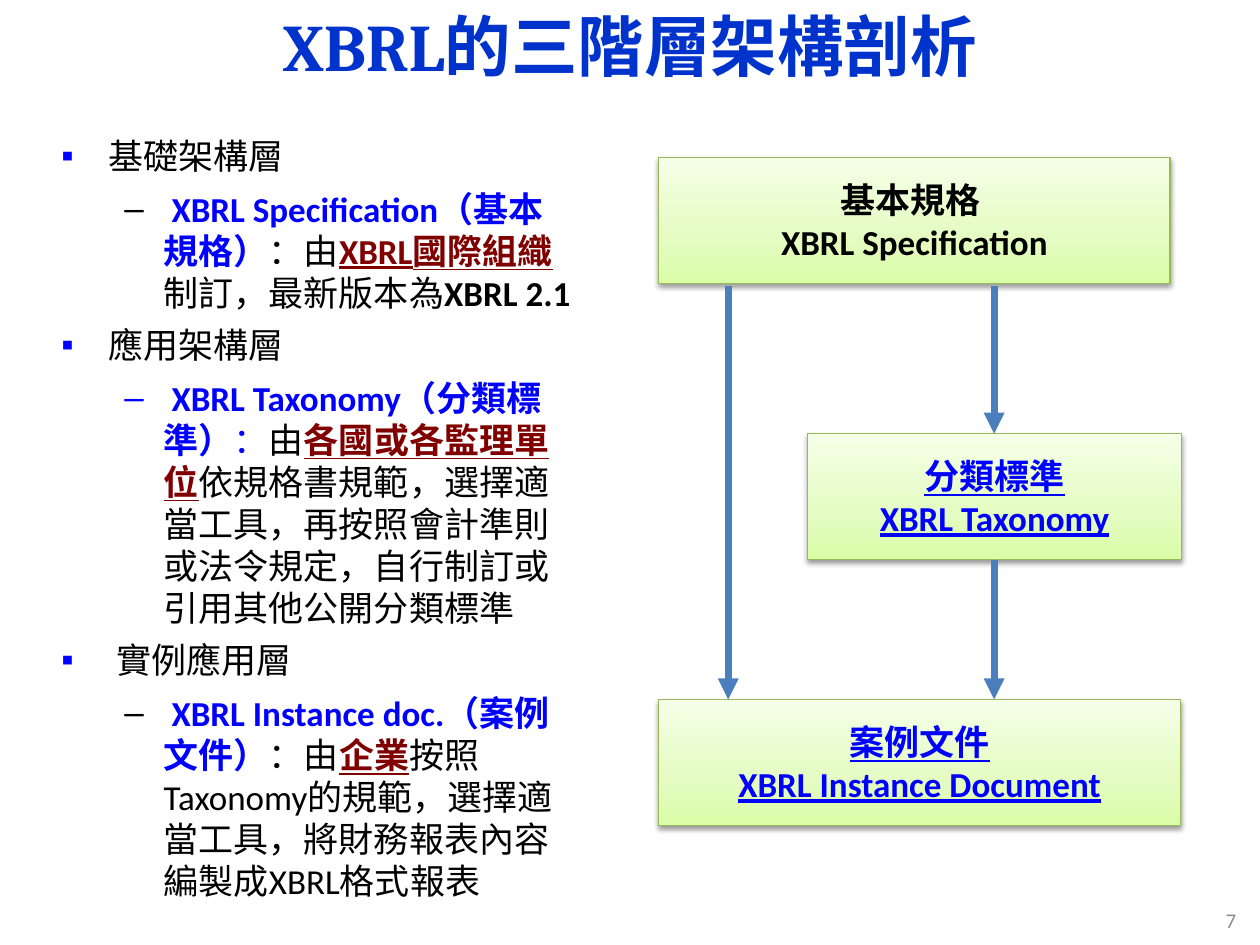
from lxml import etree
from pptx import Presentation
from pptx.dml.color import RGBColor
from pptx.enum.shapes import MSO_CONNECTOR, MSO_SHAPE
from pptx.enum.text import MSO_ANCHOR, MSO_AUTO_SIZE, PP_ALIGN
from pptx.oxml.ns import qn
from pptx.util import Cm, Pt

CENTER, RIGHT = PP_ALIGN.CENTER, PP_ALIGN.RIGHT
MIDDLE = MSO_ANCHOR.MIDDLE
RECT, STRAIGHT = MSO_SHAPE.RECTANGLE, MSO_CONNECTOR.STRAIGHT

BLACK = RGBColor(0x00, 0x00, 0x00)
BLUE = RGBColor(0x00, 0x00, 0xFF)
TITLE_BLUE = RGBColor(0x00, 0x33, 0xCC)
MAROON = RGBColor(0x80, 0x00, 0x00)
GREY = RGBColor(0x8C, 0x8C, 0x8C)
ARROW_BLUE = RGBColor(0x4B, 0x7E, 0xBC)
BOX_EDGE = RGBColor(0x98, 0xB9, 0x55)
BOX_STOPS = [(0, "DAFDA7"), (35, "E4FCC2"), (100, "F5FFE7")]

LATIN, CJK, BOX_CJK = "Calibri", "Noto Sans CJK SC", "Roboto"

# Run formats of the outline
TERM = dict(color=BLUE, bold=True)
KEY = dict(color=MAROON, bold=True, underline=True)
STRONG = dict(bold=True)
PLAIN = {}

# Each layer: heading, then the runs of its description
LAYERS = [
    ("基礎架構層", [
        (" ", PLAIN), ("XBRL Specification（基本規格）", TERM), ("：由", PLAIN),
        ("XBRL國際組織", KEY), ("制訂，最新版本為", PLAIN), ("XBRL 2.1", STRONG)]),
    ("應用架構層", [
        (" ", dict(color=BLUE)), ("XBRL Taxonomy（分類標準）", TERM),
        ("：", dict(color=BLUE)), ("由", PLAIN), ("各國或各監理單位", KEY),
        ("依規格書規範，選擇適當工具，再按照會計準則或法令規定，"
         "自行制訂或引用其他公開分類標準", PLAIN)]),
    (" 實例應用層", [
        (" ", STRONG), ("XBRL Instance doc.（案例文件）", TERM), ("：由", PLAIN),
        ("企業", KEY),
        ("按照Taxonomy的規範，選擇適當工具，將財務報表內容編製成XBRL格式報表", PLAIN)]),
]


def add_run(p, text, size=20, font=LATIN, color=BLACK, bold=False, underline=False):
    r = p.add_run()
    r.text = text
    f = r.font
    f.size, f.name, f.bold, f.underline = Pt(size), font, bold, underline
    f.color.rgb = color
    etree.SubElement(r._r.get_or_add_rPr(), qn("a:ea"), typeface=CJK)


def next_paragraph(tf):
    first = tf.paragraphs[0]
    return tf.add_paragraph() if first.runs else first


def add_bullet(p, char, left, hanging, color=None):
    pPr = p._p.get_or_add_pPr()
    pPr.set("marL", str(left))
    pPr.set("indent", str(-hanging))
    if color is not None:
        clr = etree.SubElement(pPr, qn("a:buClr"))
        etree.SubElement(clr, qn("a:srgbClr"), val=str(color))
    etree.SubElement(pPr, qn("a:buFont"), typeface="Arial")
    etree.SubElement(pPr, qn("a:buChar"), char=char)


def add_outline_paragraph(tf, runs, level=0):
    p = next_paragraph(tf)
    p.level = level
    p.line_spacing, p.space_before, p.space_after = Pt(24), Pt(0), Pt(6)
    if level:
        add_bullet(p, "–", Cm(2.06), Cm(0.79))
    else:
        add_bullet(p, "▪", Cm(0.95), Cm(0.95), BLUE)
    for text, style in runs:
        add_run(p, text, **style)


def add_title(s, text):
    sp = s.shapes.title
    sp.left, sp.top, sp.width, sp.height = Cm(1.27), Cm(0), Cm(22.86), Cm(1.83)
    tf = sp.text_frame
    tf.auto_size = MSO_AUTO_SIZE.NONE
    tf.vertical_anchor = MIDDLE
    p = tf.paragraphs[0]
    p.alignment = CENTER
    add_run(p, text, size=38, font="Cambria", color=TITLE_BLUE, bold=True)


def add_text_box(s, x, y, w, h):
    tf = s.shapes.add_textbox(Cm(x), Cm(y), Cm(w), Cm(h)).text_frame
    tf.word_wrap = True
    return tf


def add_box(s, x, y, w, lines, **style):
    sp = s.shapes.add_shape(RECT, Cm(x), Cm(y), Cm(w), Cm(2.54))
    sp.line.color.rgb, sp.line.width = BOX_EDGE, Pt(0.75)

    # Three-stop gradient running upwards
    sp.fill.gradient()
    sp.fill.gradient_angle = 90
    stops = sp._element.spPr.find(".//" + qn("a:gsLst"))
    for old in list(stops):
        stops.remove(old)
    for pos, color in BOX_STOPS:
        gs = etree.SubElement(stops, qn("a:gs"), pos=str(pos * 1000))
        etree.SubElement(gs, qn("a:srgbClr"), val=color)

    # Soft shadow below the box
    sp.shadow.inherit = False
    effects = sp._element.spPr.find(qn("a:effectLst"))
    shadow = etree.SubElement(effects, qn("a:outerShdw"), blurRad=str(Pt(3.1)),
                              dist=str(Pt(1.6)), dir="5400000", rotWithShape="0")
    clr = etree.SubElement(shadow, qn("a:srgbClr"), val="000000")
    etree.SubElement(clr, qn("a:alpha"), val="38000")

    tf = sp.text_frame
    tf.word_wrap = True
    tf.vertical_anchor = MIDDLE
    for text, font in zip(lines, (BOX_CJK, LATIN)):
        p = next_paragraph(tf)
        p.alignment = CENTER
        add_run(p, text, font=font, bold=True, **style)


def add_down_arrow(s, x, top, bottom):
    c = s.shapes.add_connector(STRAIGHT, Cm(x), Cm(top), Cm(x), Cm(bottom))
    c.line.color.rgb, c.line.width = ARROW_BLUE, Pt(4)
    etree.SubElement(c.line._get_or_add_ln(), qn("a:tailEnd"), type="triangle")
    etree.SubElement(c._element.spPr, qn("a:effectLst"))


def main():
    prs = Presentation()
    prs.slide_width, prs.slide_height = Cm(25.4), Cm(19.05)
    s = prs.slides.add_slide(prs.slide_layouts[5])
    add_title(s, "XBRL的三階層架構剖析")

    # Outline of the three layers
    tf = add_text_box(s, 0.99, 2.59, 10.92, 15.47)
    for heading, runs in LAYERS:
        add_outline_paragraph(tf, [(heading, dict(font=CJK))])
        add_outline_paragraph(tf, runs, level=1)

    # Diagram of the layers
    link = dict(color=BLUE, underline=True)
    add_box(s, 13.28, 3.18, 10.31, ["基本規格 ", "XBRL Specification"])
    add_box(s, 16.28, 8.74, 7.54, ["分類標準", "XBRL Taxonomy"], **link)
    add_box(s, 13.28, 14.1, 10.52, ["案例文件", "XBRL Instance Document"], **link)
    for x, top, bottom in [(20.04, 5.77, 8.74), (20.04, 11.28, 14.1),
                           (14.68, 5.77, 14.1)]:
        add_down_arrow(s, x, top, bottom)

    # Slide number
    tf = add_text_box(s, 19.25, 18.03, 5.92, 1.02)
    tf.vertical_anchor = MIDDLE
    p = tf.paragraphs[0]
    p.alignment = RIGHT
    add_run(p, "7", size=12, color=GREY)

    prs.save("out.pptx")


if __name__ == "__main__":
    main()
